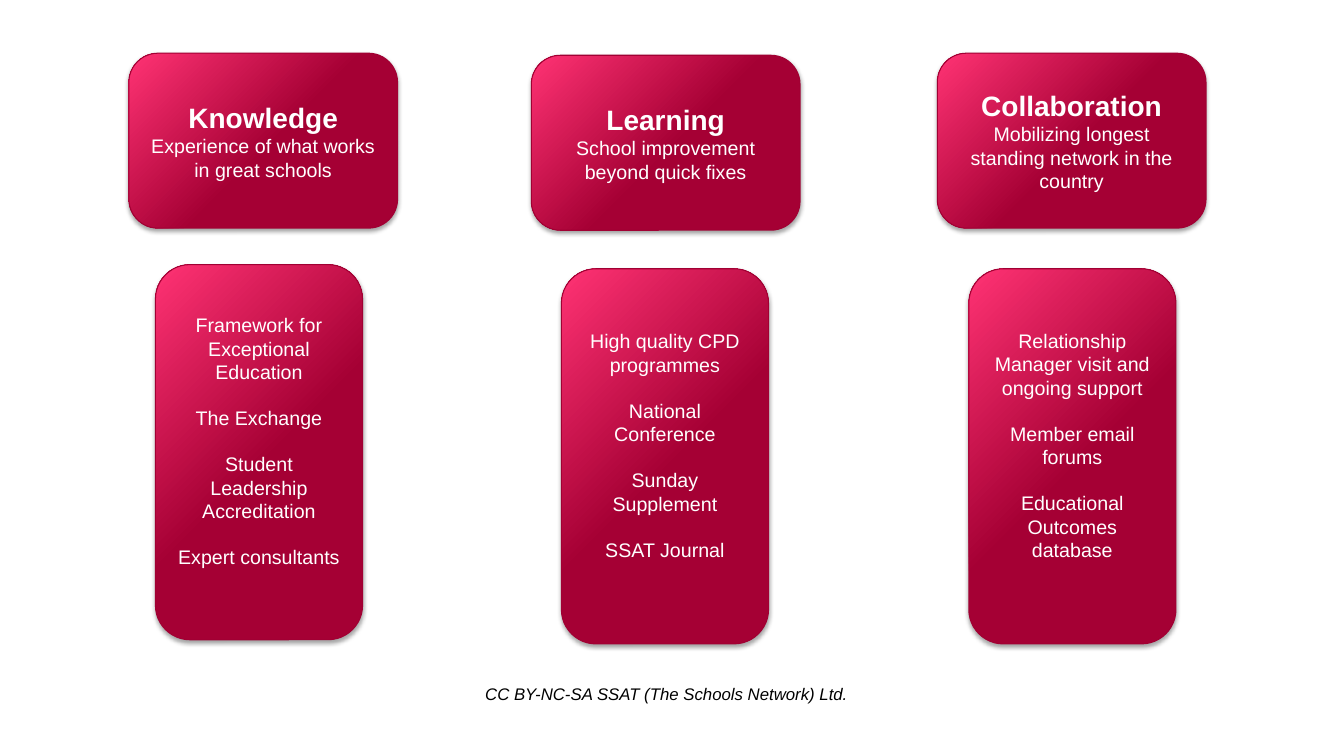
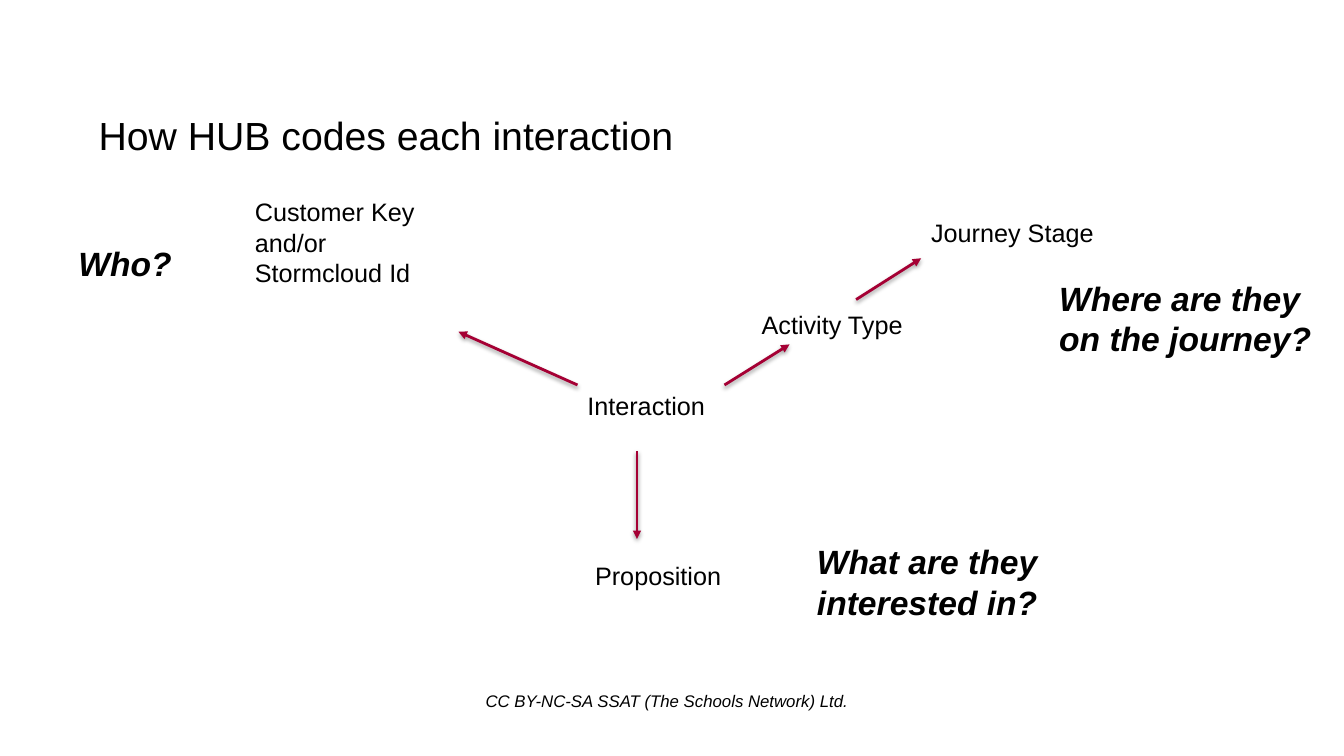
from dataclasses import dataclass

from lxml import etree
from pptx import Presentation
from pptx.dml.color import RGBColor
from pptx.enum.shapes import MSO_CONNECTOR, MSO_SHAPE
from pptx.enum.text import MSO_ANCHOR, MSO_AUTO_SIZE, PP_ALIGN
from pptx.oxml.ns import qn
from pptx.util import Pt

LEFT, CENTER = PP_ALIGN.LEFT, PP_ALIGN.CENTER
MIDDLE, BOTTOM = MSO_ANCHOR.MIDDLE, MSO_ANCHOR.BOTTOM
NO_FIT, GROW = MSO_AUTO_SIZE.NONE, MSO_AUTO_SIZE.SHAPE_TO_FIT_TEXT
ROUNDED, STRAIGHT = MSO_SHAPE.ROUNDED_RECTANGLE, MSO_CONNECTOR.STRAIGHT


@dataclass(frozen=True)
class Theme:
    font: str = "Arial"
    ink: str = "000000"
    white: str = "FFFFFF"
    crimson: str = "A50034"
    pink: str = "FF3374"
    outline: str = "A10033"
    title: int = 28
    question: int = 24
    heading: int = 20
    label: int = 18
    body: int = 14
    footer: int = 12
    leading: float = 1.3


THEME = Theme()
FOOTER = "CC BY-NC-SA SSAT (The Schools Network) Ltd."
CARD_SIZE = (192, 125)
COLUMN_SIZE = (148, 268)
ITEM_GAP = 16  # one line of body text

# Card position, heading, summary, column position, column items
PILLARS = [
    ((92, 38), "Knowledge", "Experience of what works in great schools", (111, 189),
     ["Framework for Exceptional Education", "The Exchange",
      "Student Leadership Accreditation", "Expert consultants"]),
    ((379.5, 39.5), "Learning", "School improvement beyond quick fixes", (401, 192),
     ["High quality CPD programmes", "National Conference",
      "Sunday Supplement", "SSAT Journal"]),
    ((669.5, 38), "Collaboration", "Mobilizing longest standing network in the country",
     (692, 192),
     ["Relationship Manager visit and ongoing support", "Member email forums",
      "Educational Outcomes database"]),
]

# Box, text, wrap
LABELS = [
    ((412.5, 275, 99.5, 29), "Interaction", False),
    ((175, 137, 153, 73), "Customer Key and/or Stormcloud Id", True),
    ((537, 217.5, 116, 29), "Activity Type", False),
    ((658, 152, 132, 29), "Journey Stage", False),
    ((418, 397, 105, 29), "Proposition", False),
]
QUESTIONS = [
    ((49, 170, 81, 36), "Who?", False),
    ((576.5, 383, 202.5, 65.5), "What are they interested in?", True),
    ((749.5, 195, 202, 65.5), "Where are they on the journey?", True),
]
ARROWS = [
    (412.5, 275, 327.5, 237),
    (517.5, 275, 564, 246),
    (611.5, 214, 658, 184.5),
    (455, 322, 455, 385),
]


def color(value):
    return RGBColor.from_string(value)


def points(*values):
    return [Pt(value) for value in values]


def add_run(paragraph, text, size, ink=THEME.ink, bold=False, italic=False):
    run = paragraph.add_run()
    run.text = text
    font = run.font
    font.name, font.size, font.bold, font.italic = THEME.font, Pt(size), bold, italic
    font.color.rgb = color(ink)


def next_paragraph(frame, index):
    return frame.add_paragraph() if index else frame.paragraphs[0]


def add_shadow(props, opacity, distance):
    effects = props.find(qn("a:effectLst"))
    if effects is None:
        effects = etree.SubElement(props, qn("a:effectLst"))
    shadow = etree.SubElement(effects, qn("a:outerShdw"), blurRad=str(Pt(3.15)),
                              dist=str(Pt(distance)), dir="5400000", rotWithShape="0")
    black = etree.SubElement(shadow, qn("a:srgbClr"), val=THEME.ink)
    etree.SubElement(black, qn("a:alpha"), val=str(opacity * 1000))


def fill_placeholder(holder, box, text, size, align, insets, italic=False):
    holder.left, holder.top, holder.width, holder.height = points(*box)
    frame = holder.text_frame
    frame.word_wrap, frame.auto_size, frame.vertical_anchor = True, NO_FIT, BOTTOM
    (frame.margin_left, frame.margin_top,
     frame.margin_right, frame.margin_bottom) = points(*insets)
    paragraph = frame.paragraphs[0]
    props = paragraph._p.get_or_add_pPr()
    props.set("marL", "0")
    props.set("indent", "0")
    etree.SubElement(props, qn("a:buNone"))
    paragraph.alignment, paragraph.line_spacing = align, THEME.leading
    paragraph.space_before = Pt(0)
    add_run(paragraph, text, size, italic=italic)


def add_slide(prs, footer_box, title=None):
    """Slide with the shared title style and licence line."""
    slide = prs.slides.add_slide(prs.slide_layouts[1])
    heading, footer = slide.placeholders
    if title:
        fill_placeholder(heading, (70.5, 42.5, 822, 70.5), title, THEME.title,
                         LEFT, (0, 0, 0, 0))
    else:
        heading.element.getparent().remove(heading.element)
    fill_placeholder(footer, footer_box, FOOTER, THEME.footer, CENTER,
                     (0, 3.6, 7.2, 0), italic=True)
    return slide


def add_panel(slide, position, size):
    panel = slide.shapes.add_shape(ROUNDED, *points(*position, *size))
    panel.fill.gradient()
    panel.fill.gradient_angle = 135
    stops = ((0.47, THEME.crimson), (1, THEME.pink))
    for stop, (place, shade) in zip(panel.fill.gradient_stops, stops):
        stop.position = place
        stop.color.rgb = color(shade)
    panel.line.color.rgb = color(THEME.outline)
    panel.line.width = Pt(0.75)
    panel.shadow.inherit = False
    add_shadow(panel._element.spPr, 35, 1.8)
    panel.text_frame.word_wrap = True
    panel.text_frame.vertical_anchor = MIDDLE
    return panel.text_frame


def add_card(slide, position, heading, summary):
    frame = add_panel(slide, position, CARD_SIZE)
    lines = ((heading, THEME.heading, True), (summary, THEME.body, False))
    for index, (text, size, bold) in enumerate(lines):
        paragraph = next_paragraph(frame, index)
        paragraph.alignment = CENTER
        add_run(paragraph, text, size, THEME.white, bold)


def add_column(slide, position, items):
    frame = add_panel(slide, position, COLUMN_SIZE)
    frame.margin_bottom = Pt(3.6 + ITEM_GAP)
    for index, item in enumerate(items):
        paragraph = next_paragraph(frame, index)
        paragraph.alignment = CENTER
        paragraph.space_before = Pt(ITEM_GAP if index else 0)
        add_run(paragraph, item, THEME.body, THEME.white)


def add_note(slide, box, text, wrap, size, strong=False):
    frame = slide.shapes.add_textbox(*points(*box)).text_frame
    frame.word_wrap, frame.auto_size = wrap, GROW
    add_run(frame.paragraphs[0], text, size, bold=strong, italic=strong)


def add_arrow(slide, ends):
    arrow = slide.shapes.add_connector(STRAIGHT, *points(*ends))
    arrow.line.color.rgb = color(THEME.crimson)
    arrow.line.width = Pt(2)
    etree.SubElement(arrow.line._get_or_add_ln(), qn("a:tailEnd"), type="triangle")
    add_shadow(arrow._element.spPr, 38, 1.6)


def build_pillars(prs):
    slide = add_slide(prs, (337.5, 475, 284.5, 28))
    for card_position, heading, summary, column_position, items in PILLARS:
        add_card(slide, card_position, heading, summary)
        add_column(slide, column_position, items)


def build_interaction(prs):
    slide = add_slide(prs, (338, 479.5, 284, 28), "How HUB codes each interaction")
    for ends in ARROWS:
        add_arrow(slide, ends)
    for label in LABELS:
        add_note(slide, *label, THEME.label)
    for question in QUESTIONS:
        add_note(slide, *question, THEME.question, strong=True)


def main():
    prs = Presentation()
    prs.slide_width, prs.slide_height = points(960, 540)
    build_pillars(prs)
    build_interaction(prs)
    prs.save("out.pptx")


if __name__ == "__main__":
    main()
